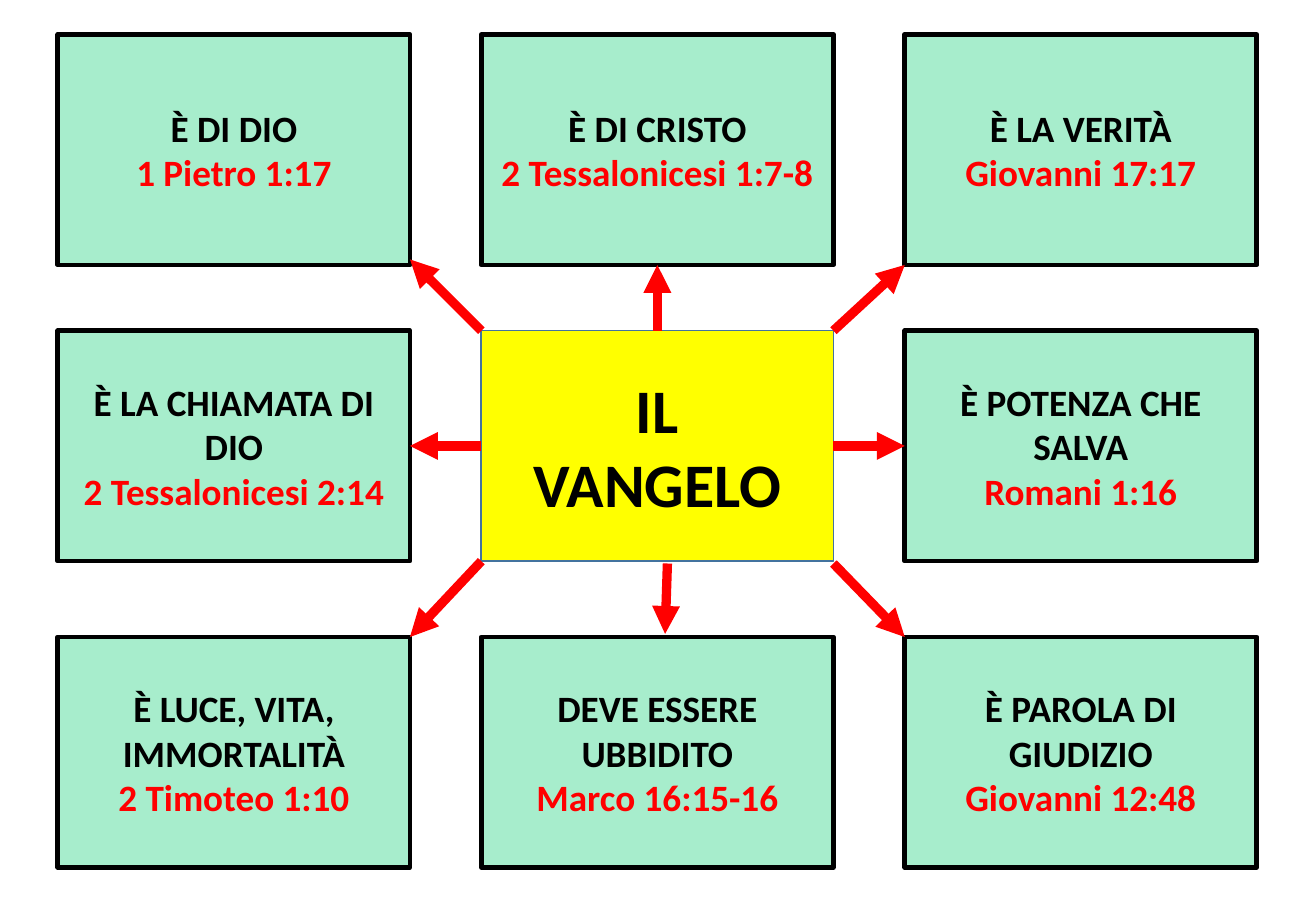
import pptx
import pptx.dml.color
import pptx.enum.shapes
import pptx.enum.text
import pptx.oxml.ns
import pptx.util
from dataclasses import dataclass
from lxml import etree

Pt = pptx.util.Pt


@dataclass(frozen=True)
class Theme:
    font: str = "Calibri"
    hub_size: int = 40
    card_size: int = 24
    hub_fill: str = "FFFF00"
    hub_line: str = "43739E"
    card_fill: str = "A7EDCC"
    card_line: str = "000000"
    text: str = "000000"
    accent: str = "FF0000"


THEME = Theme()
SLIDE_SIZE = (850.3, 595.4)
MAP_BOX = (37.4, 22.3, 774.7, 538.5)
CARD_SIZE = (227.5, 149)
MIDDLE_ROW_OFFSET = 191.5

HUB = ("IL", "VANGELO")
# (column, row): statement and Bible reference
CARDS = {
    (0, 0): ("È DI DIO", "1 Pietro 1:17"),
    (1, 0): ("È DI CRISTO", "2 Tessalonicesi 1:7-8"),
    (2, 0): ("È LA VERITÀ", "Giovanni 17:17"),
    (0, 1): ("È LA CHIAMATA DI DIO", "2 Tessalonicesi 2:14"),
    (2, 1): ("È POTENZA CHE SALVA", "Romani 1:16"),
    (0, 2): ("È LUCE, VITA, IMMORTALITÀ", "2 Timoteo 1:10"),
    (1, 2): ("DEVE ESSERE UBBIDITO", "Marco 16:15-16"),
    (2, 2): ("È PAROLA DI GIUDIZIO", "Giovanni 12:48"),
}
# Small offsets (start x, start y, end x, end y) of loose arrows
NUDGES = {
    (0, 0): (0, 0, 0, -3.6),
    (1, 2): (6.5, 1.5, 5, -2),
    (2, 2): (0, 1.5, 0, 0),
}
# Direction from the hub: connection sites on hub and card
SITES = {(0, -1): (0, 2), (-1, 0): (1, 3), (1, 0): (3, 1)}


def rgb(code):
    return pptx.dml.color.RGBColor.from_string(code)


def add_panel(slide, box, lines, fill, border, border_width, size, colors):
    """Bordered rectangle with one centred paragraph per line."""
    panel = slide.shapes.add_shape(
        pptx.enum.shapes.MSO_SHAPE.RECTANGLE, *map(Pt, box))
    panel.shadow.inherit = False
    panel.fill.solid()
    panel.fill.fore_color.rgb = rgb(fill)
    panel.line.color.rgb = rgb(border)
    panel.line.width = Pt(border_width)

    frame = panel.text_frame
    frame.word_wrap = True
    frame.vertical_anchor = pptx.enum.text.MSO_ANCHOR.MIDDLE
    frame.text = "\n".join(lines)
    for paragraph, color in zip(frame.paragraphs, colors):
        paragraph.alignment = pptx.enum.text.PP_ALIGN.CENTER
        font = paragraph.runs[0].font
        font.name = THEME.font
        font.size = Pt(size)
        font.bold = True
        font.color.rgb = rgb(color)
    return panel


def add_arrow(slide, start, end):
    """Thick arrow pointing at its end."""
    arrow = slide.shapes.add_connector(
        pptx.enum.shapes.MSO_CONNECTOR.STRAIGHT, *map(Pt, (*start, *end)))
    arrow.line.color.rgb = rgb(THEME.accent)
    arrow.line.width = Pt(6)
    qn = pptx.oxml.ns.qn
    etree.SubElement(arrow.line._get_or_add_ln(), qn("a:tailEnd"), type="triangle")
    etree.SubElement(arrow._element.spPr, qn("a:effectLst"))
    return arrow


def add_gospel_map(slide, box):
    """Hub in the centre of a 3 by 3 grid, with an arrow to each card."""
    left, top, width, height = box
    card_w, card_h = CARD_SIZE
    columns = [left + i * (width - card_w) / 2 for i in range(3)]
    rows = [top, top + MIDDLE_ROW_OFFSET, top + height - card_h]

    # Hub
    hub = add_panel(slide, (columns[1], rows[1], card_w, card_h), HUB,
                    THEME.hub_fill, THEME.hub_line, 1, THEME.hub_size,
                    (THEME.text, THEME.text))

    # Cards
    cards = {
        (col, row): add_panel(
            slide, (columns[col], rows[row], card_w, card_h), lines,
            THEME.card_fill, THEME.card_line, 3, THEME.card_size,
            (THEME.text, THEME.accent))
        for (col, row), lines in CARDS.items()
    }

    # Arrows between facing sides or corners
    for (col, row), card in cards.items():
        dx, dy = col - 1, row - 1
        start_x, start_y, end_x, end_y = NUDGES.get((col, row), (0, 0, 0, 0))
        start = (columns[1] + card_w * (1 + dx) / 2 + start_x,
                 rows[1] + card_h * (1 + dy) / 2 + start_y)
        end = (columns[col] + card_w * (1 - dx) / 2 + end_x,
               rows[row] + card_h * (1 - dy) / 2 + end_y)
        arrow = add_arrow(slide, start, end)
        if (dx, dy) in SITES:
            hub_site, card_site = SITES[dx, dy]
            arrow.begin_connect(hub, hub_site)
            arrow.end_connect(card, card_site)


def main():
    deck = pptx.Presentation()
    deck.slide_width, deck.slide_height = map(Pt, SLIDE_SIZE)
    slide = deck.slides.add_slide(deck.slide_layouts[6])
    add_gospel_map(slide, MAP_BOX)
    deck.save("out.pptx")


if __name__ == "__main__":
    main()
